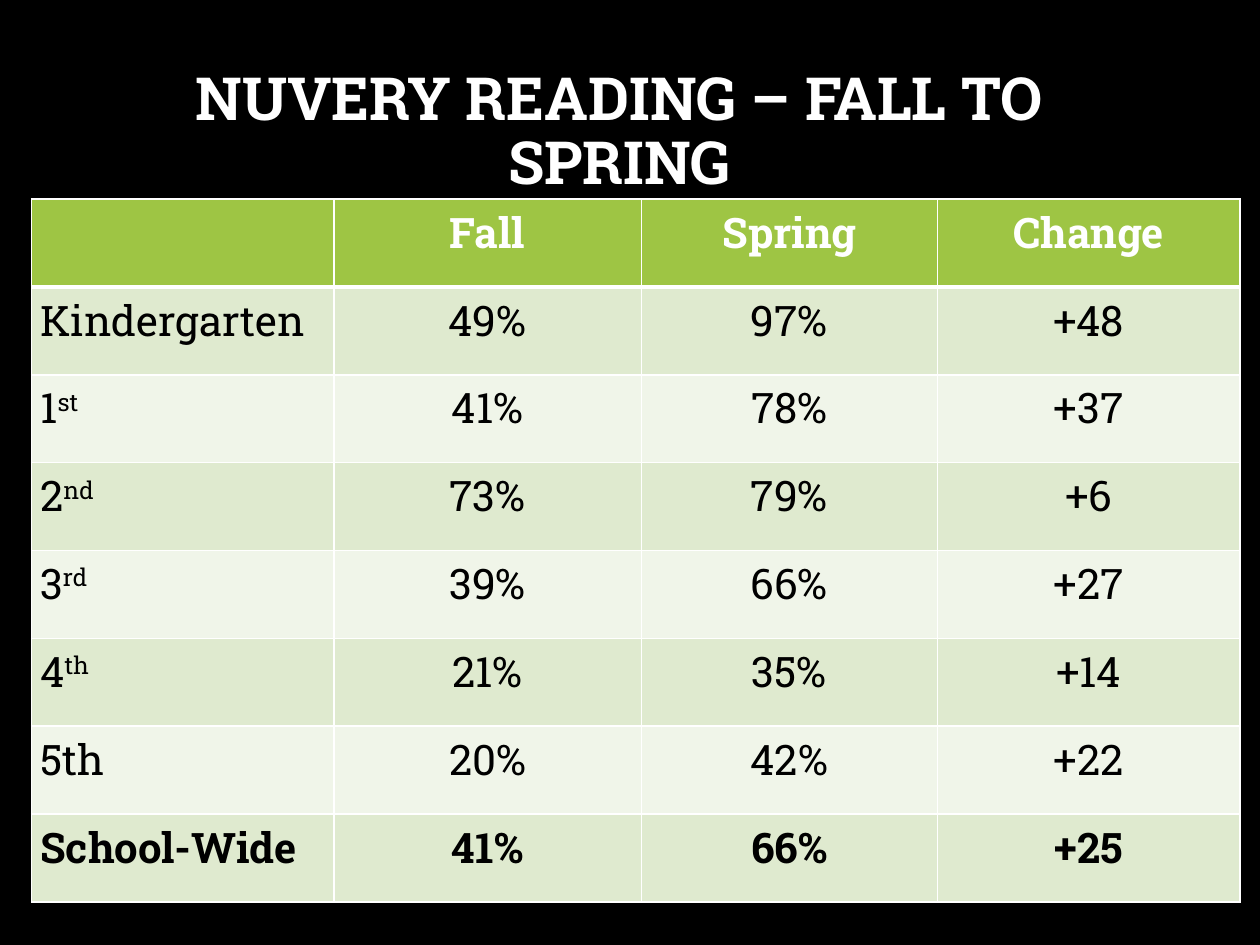
"""Build the reading results slide: a title above a fall-to-spring table."""
from pptx import Presentation
from pptx.dml.color import RGBColor
from pptx.enum.text import MSO_ANCHOR, PP_ALIGN
from pptx.oxml.ns import qn
from pptx.util import Inches, Pt
from lxml import etree

LEFT, CENTER = PP_ALIGN.LEFT, PP_ALIGN.CENTER
TOP, MIDDLE = MSO_ANCHOR.TOP, MSO_ANCHOR.MIDDLE

TITLE = "NUVERY READING – FALL TO SPRING"
HEAD = ("", "Fall", "Spring", "Change")
ROWS = [
    ("Kindergarten", "49%", "97%", "+48"),
    (("1", "st"), "41%", "78%", "+37"),
    (("2", "nd"), "73%", "79%", "+6"),
    (("3", "rd"), "39%", "66%", "+27"),
    (("4", "th"), "21%", "35%", "+14"),
    ("5th", "20%", "42%", "+22"),
    ("School-Wide", "41%", "66%", "+25"),
]
WIDTHS = (2.4, 2.44, 2.35, 2.4)
HEIGHT = 5.58
THEME = {
    "font": "Roboto Slab", "title": 34, "body": 24,
    "back": "000000", "light": "FFFFFF", "dark": "000000",
    "head": "9EC544", "bands": ("DFEACF", "F0F5E9"),
    "rule": 1, "thick": 3,
}


def paint(fill, color):
    """Give a fill one solid colour."""
    fill.solid()
    fill.fore_color.rgb = RGBColor.from_string(color)


def write(frame, text, size=THEME["body"], color=THEME["dark"],
          bold=False, align=CENTER, space=None):
    """Write text, or a (base, superscript) pair, into a frame."""
    para = frame.paragraphs[0]
    para.alignment = align
    para.line_spacing = space
    base, *raised = (text,) if isinstance(text, str) else text
    for part in (base, *raised):
        run = para.add_run()
        run.text = part
        font = run.font
        font.name, font.size, font.bold = THEME["font"], Pt(size), bold
        font.color.rgb = RGBColor.from_string(color)
        if part in raised:
            run._r.get_or_add_rPr().set("baseline", "30000")


def border(cell, **widths):
    """Draw the four cell borders, L, R, T and B."""
    props = cell._tc.get_or_add_tcPr()
    for side in "LRTB":
        width = Pt(widths.get(side, THEME["rule"]))
        line = etree.SubElement(props, qn(f"a:ln{side}"), w=str(width))
        fill = etree.SubElement(line, qn("a:solidFill"))
        etree.SubElement(fill, qn("a:srgbClr"), val=THEME["light"])


def add_title(slide):
    """Place the title."""
    box = slide.shapes.add_textbox(
        Inches(0.67), Inches(0.33), Inches(8.49), Inches(1.45))
    frame = box.text_frame
    frame.word_wrap = True
    frame.vertical_anchor = MIDDLE
    write(frame, TITLE, size=THEME["title"], color=THEME["light"],
          bold=True, space=0.9)


def add_grid(slide):
    """Place the table, with a header and banded rows."""
    data = [HEAD, *ROWS]
    table = slide.shapes.add_table(
        len(data), len(HEAD), Inches(0.25), Inches(1.58),
        Inches(sum(WIDTHS)), Inches(HEIGHT)).table
    table.horz_banding = False
    for col, width in zip(table.columns, WIDTHS):
        col.width = Inches(width)
    for i, (row, texts) in enumerate(zip(table.rows, data)):
        row.height = Inches(HEIGHT / len(data))
        first, last = i == 0, i == len(data) - 1
        edges = {0: {"B": THEME["thick"]}, 1: {"T": THEME["thick"]}}
        for j, (cell, text) in enumerate(zip(row.cells, texts)):
            border(cell, **edges.get(i, {}))
            paint(cell.fill, THEME["head"] if first
                  else THEME["bands"][(i - 1) % 2])
            cell.margin_left = cell.margin_right = Inches(0.07)
            cell.margin_top = cell.margin_bottom = Inches(0.04)
            cell.vertical_anchor = TOP
            if text:
                write(cell.text_frame, text, bold=first or last,
                      color=THEME["light" if first else "dark"],
                      align=CENTER if j else LEFT)


def main():
    """Build and save the slide."""
    deck = Presentation()
    deck.slide_width, deck.slide_height = Inches(10), Inches(7.5)
    slide = deck.slides.add_slide(deck.slide_layouts[6])
    paint(slide.background.fill, THEME["back"])
    add_title(slide)
    add_grid(slide)
    deck.save("out.pptx")


if __name__ == "__main__":
    main()
